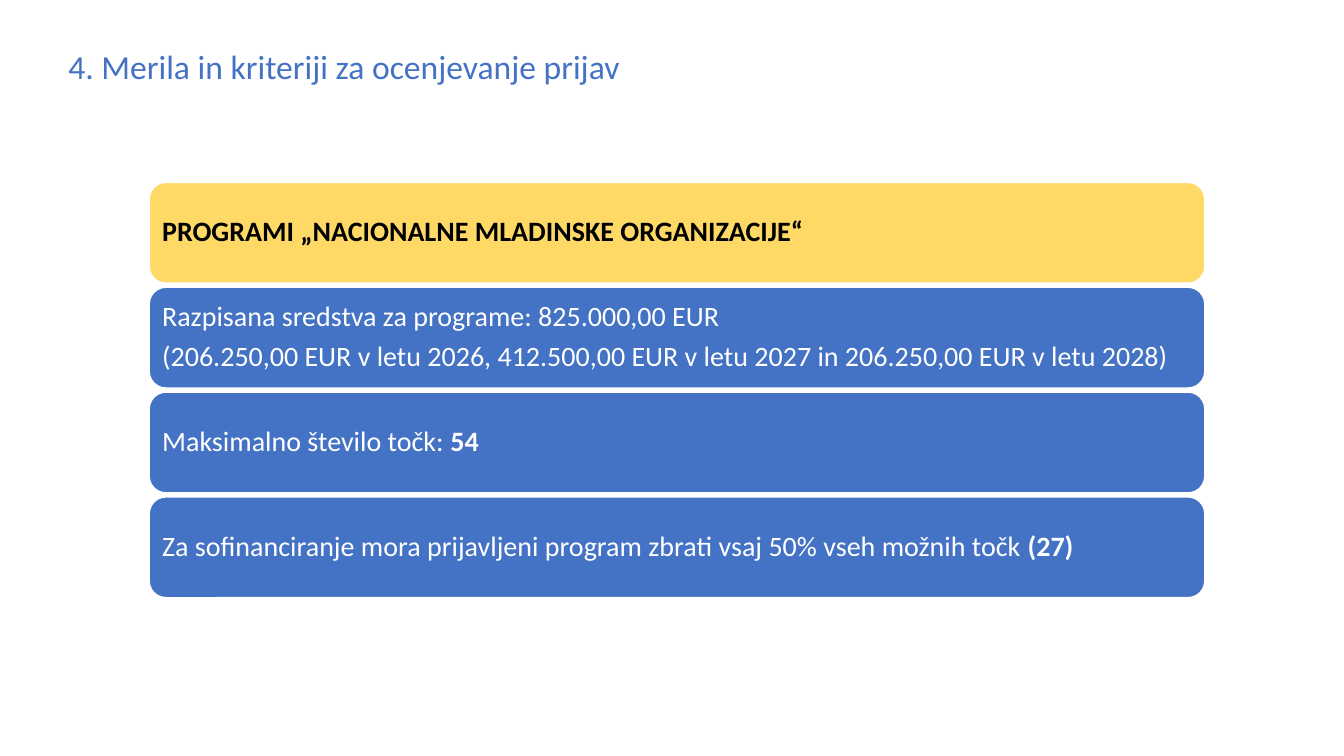
import pptx
import pptx.util
import pptx.dml.color
import pptx.enum.shapes
import pptx.enum.text

Inch = pptx.util.Inches
Pt = pptx.util.Pt


def hue(code):
    return pptx.dml.color.RGBColor.from_string(code)


def style(run, size, code, bold=False):
    run.font.name = "Calibri"
    run.font.size = Pt(size)
    run.font.bold = bold
    run.font.color.rgb = hue(code)


BLUE, GOLD, WHITE, BLACK = "4472C4", "FFD966", "FFFFFF", "000000"

deck = pptx.Presentation()
deck.slide_width = Inch(13.33)
deck.slide_height = Inch(7.5)
slide = deck.slides.add_slide(deck.slide_layouts[6])

title = slide.shapes.add_textbox(Inch(0.58), Inch(0.41), Inch(5.72), Inch(0.5))
title.text_frame.word_wrap = False
title.text_frame.text = "4. Merila in kriteriji za ocenjevanje prijav"
style(title.text_frame.paragraphs[0].runs[0], 24, BLUE)

left, top, width, height, step = 1.48, 1.81, 10.47, 1, 1.04
bars = [
    (GOLD, BLACK, [("", "PROGRAMI „NACIONALNE MLADINSKE ORGANIZACIJE“")]),
    (BLUE, WHITE, [
        ("Razpisana sredstva za programe: 825.000,00 EUR", ""),
        ("(206.250,00 EUR v letu 2026, 412.500,00 EUR v letu 2027 in 206.250,00 EUR v letu 2028)", ""),
    ]),
    (BLUE, WHITE, [("Maksimalno število točk: ", "54")]),
    (BLUE, WHITE, [("Za sofinanciranje mora prijavljeni program zbrati vsaj 50% vseh možnih točk ", "(27)")]),
]

for row, (fill, ink, lines) in enumerate(bars):
    bar = slide.shapes.add_shape(
        pptx.enum.shapes.MSO_SHAPE.ROUNDED_RECTANGLE,
        Inch(left), Inch(top + row * step), Inch(width), Inch(height))
    bar.shadow.inherit = False
    bar.fill.solid()
    bar.fill.fore_color.rgb = hue(fill)
    bar.line.color.rgb = hue(WHITE)
    bar.line.width = Pt(1)
    frame = bar.text_frame
    frame.word_wrap = True
    frame.vertical_anchor = pptx.enum.text.MSO_ANCHOR.MIDDLE
    frame.margin_left = frame.margin_right = Inch(0.08)
    frame.margin_top = frame.margin_bottom = Inch(0.08)
    for rank, (plain, strong) in enumerate(lines):
        para = frame.add_paragraph() if rank else frame.paragraphs[0]
        para.alignment = pptx.enum.text.PP_ALIGN.LEFT
        para.line_spacing = 0.9
        para.space_after = Pt(7)
        for text, bold in ((plain, False), (strong, True)):
            if text:
                run = para.add_run()
                run.text = text
                style(run, 20, ink, bold)

deck.save("out.pptx")
